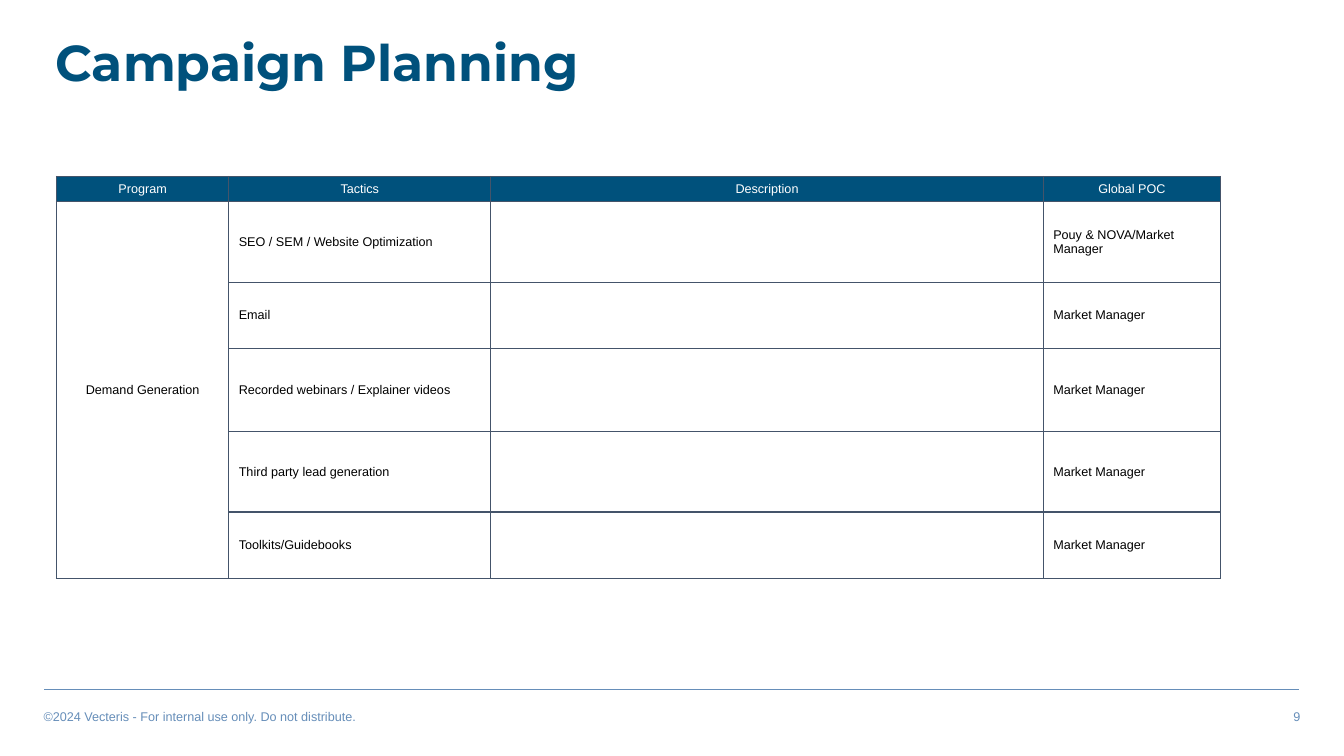
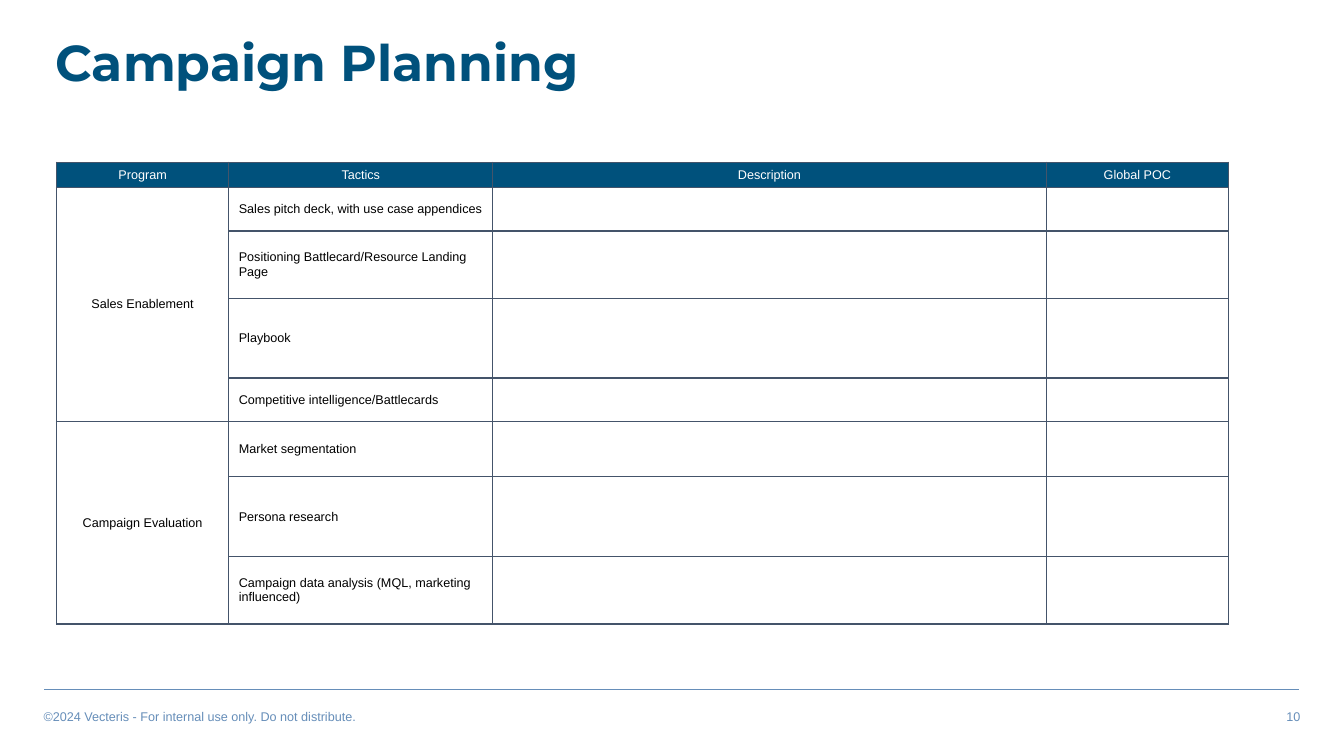
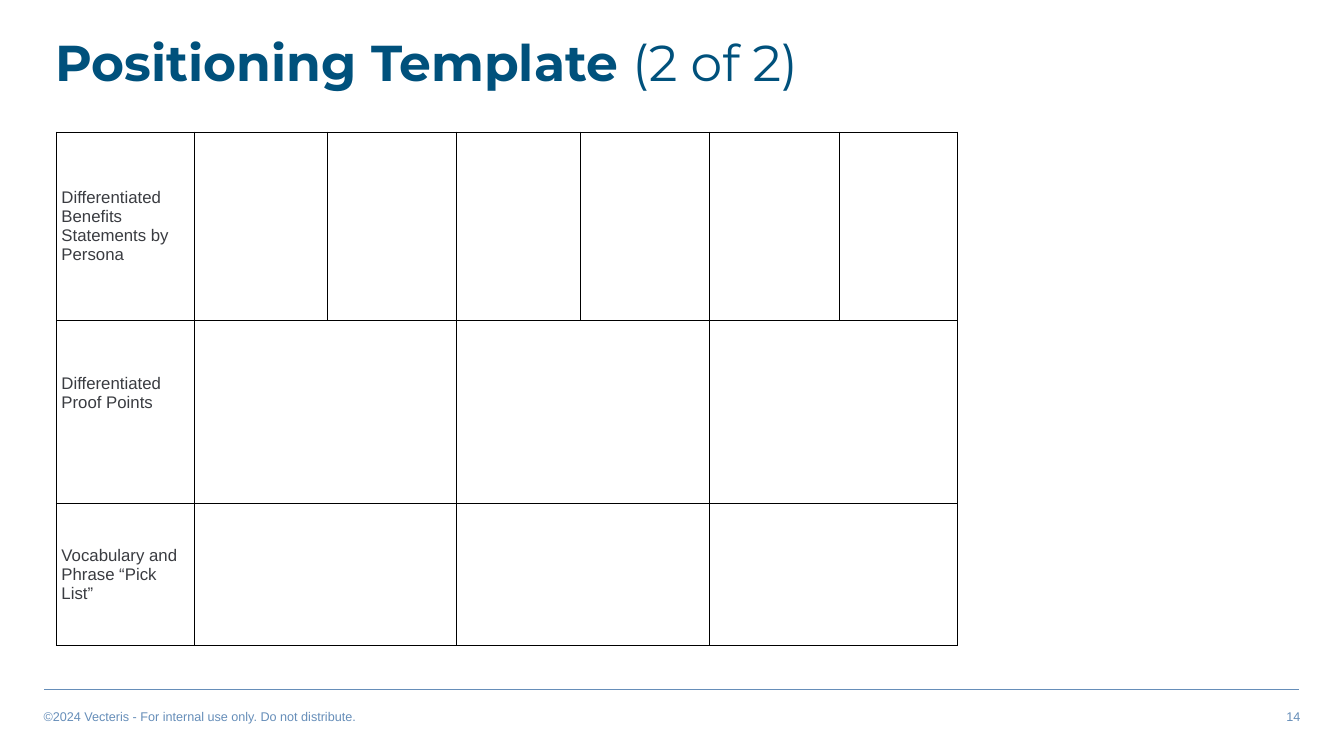
from lxml import etree
from pptx import Presentation
from pptx.dml.color import RGBColor
from pptx.enum.shapes import MSO_CONNECTOR as Connector
from pptx.enum.text import MSO_ANCHOR as Anchor, PP_ALIGN as Align
from pptx.oxml.ns import qn
from pptx.util import Pt

# Shared look
COLORS = {"navy": "00517C", "footer": "668EB9", "grid": "44546A",
          "white": "FFFFFF", "black": "000000", "label": "3A3C41"}
TITLE_FONT, BODY_FONT = "Montserrat", "Arial"
TABLE_LEFT = 40.3
FOOTER = "©2024 Vecteris - For internal use only. Do not distribute."

# Content: each program lists its tactics as (tactic, description, contact)
HEADERS = ["Program", "Tactics", "Description", "Global POC"]
CAMPAIGNS = [
    {"page": 9, "top": 126, "columns": [123.1, 187.2, 394.6, 126.7],
     "rows": [17.5, 57.6, 47.5, 59, 57.6, 47.5],
     "programs": [("Demand Generation", [
         ("SEO / SEM / Website Optimization", "", "Pouy & NOVA/Market Manager"),
         ("Email", "", "Market Manager"),
         ("Recorded webinars / Explainer videos", "", "Market Manager"),
         ("Third party lead generation", "", "Market Manager"),
         ("Toolkits/Guidebooks", "", "Market Manager")])]},
    {"page": 10, "top": 115.9, "columns": [123.1, 188.6, 395.3, 130.3],
     "rows": [17.5, 31, 48.2, 56.9, 31, 39.6, 56.9, 48.2],
     "programs": [
         ("Sales Enablement", [
             ("Sales pitch deck, with use case appendices", "", ""),
             ("Positioning Battlecard/Resource Landing Page", "", ""),
             ("Playbook", "", ""),
             ("Competitive intelligence/Battlecards", "", "")]),
         ("Campaign Evaluation", [
             ("Market segmentation", "", ""),
             ("Persona research", "", ""),
             ("Campaign data analysis (MQL, marketing influenced)", "", "")])]},
]
# Positioning rows: (label, columns per block, bottom margin)
POSITIONING = {
    "page": 14, "top": 94.3,
    "columns": [98.6, 95, 92.2, 88.6, 92.2, 92.9, 84.2],
    "rows": [134.6, 131, 101.5],
    "labels": [("Differentiated Benefits Statements by Persona", 1, 2.2),
               ("Differentiated Proof Points", 2, 29.8),
               ("Vocabulary and Phrase “Pick List”", 2, 2.2)],
}


def rgb(name):
    return RGBColor.from_string(COLORS[name])


def add_run(paragraph, text, size, color, font=BODY_FONT, bold=False):
    run = paragraph.add_run()
    run.text = text
    run.font.size, run.font.name, run.font.bold = Pt(size), font, bold
    run.font.color.rgb = rgb(color)


def add_text_box(slide, left, top, width, height):
    frame = slide.shapes.add_textbox(Pt(left), Pt(top), Pt(width), Pt(height)).text_frame
    frame.word_wrap = True
    return frame.paragraphs[0]


def add_page(deck, page, title, suffix=""):
    slide = deck.slides.add_slide(deck.slide_layouts[6])
    # Footer rule, copyright and page number
    rule = slide.shapes.add_connector(Connector.STRAIGHT, Pt(31.7), Pt(492.5), Pt(928.1), Pt(492.5))
    rule.line.color.rgb, rule.line.width = rgb("footer"), Pt(1)
    etree.SubElement(rule._element.spPr, qn("a:effectLst"))
    for left, text, align in ((24, FOOTER, Align.LEFT), (552, str(page), Align.RIGHT)):
        paragraph = add_text_box(slide, left, 502.6, 384, 18)
        paragraph.alignment = align
        add_run(paragraph, text, 9, "footer")
    # Title
    heading = add_text_box(slide, 32.4, 23.8, 731.5, 54.7)
    heading.line_spacing = 0.9
    add_run(heading, title, 36, "navy", TITLE_FONT, True)
    if suffix:
        add_run(heading, suffix, 36, "navy", TITLE_FONT)
    return slide


def add_grid(slide, plan, border, border_width):
    columns, rows = plan["columns"], plan["rows"]
    table = slide.shapes.add_table(len(rows), len(columns), Pt(TABLE_LEFT), Pt(plan["top"]),
                                   Pt(sum(columns)), Pt(sum(rows))).table
    table.first_row = table.horz_banding = False
    for column, width in zip(table.columns, columns):
        column.width = Pt(width)
    for row, height in zip(table.rows, rows):
        row.height = Pt(height)
    for cell in table.iter_cells():
        properties = cell._tc.get_or_add_tcPr()
        for side in ("lnL", "lnR", "lnT", "lnB"):
            line = etree.SubElement(properties, qn(f"a:{side}"), w=str(Pt(border_width)))
            fill = etree.SubElement(line, qn("a:solidFill"))
            etree.SubElement(fill, qn("a:srgbClr"), val=COLORS[border])
        cell.fill.background()
    return table


def write_cell(cell, text, size, color, align=Align.LEFT, anchor=Anchor.MIDDLE):
    cell.vertical_anchor = anchor
    if text:
        paragraph = cell.text_frame.paragraphs[0]
        paragraph.alignment = align
        add_run(paragraph, text, size, color)


def build_campaign(deck, plan):
    slide = add_page(deck, plan["page"], "Campaign Planning")
    table = add_grid(slide, plan, "grid", 1)
    for col, header in enumerate(HEADERS):
        cell = table.cell(0, col)
        cell.fill.solid()
        cell.fill.fore_color.rgb = rgb("navy")
        write_cell(cell, header, 9, "white", Align.CENTER, Anchor.BOTTOM)
    first = 1
    for program, tactics in plan["programs"]:
        table.cell(first, 0).merge(table.cell(first + len(tactics) - 1, 0))
        write_cell(table.cell(first, 0), program, 9, "black", Align.CENTER)
        for row, tactic in enumerate(tactics, first):
            for col, text in enumerate(tactic, 1):
                write_cell(table.cell(row, col), text, 9, "black")
        first += len(tactics)


def build_positioning(deck, plan):
    slide = add_page(deck, plan["page"], "Positioning Template ", "(2 of 2)")
    table = add_grid(slide, plan, "black", 0.75)
    for row, (label, span, bottom) in enumerate(plan["labels"]):
        cell = table.cell(row, 0)
        cell.margin_left = cell.margin_right = Pt(3.6)
        cell.margin_top, cell.margin_bottom = Pt(2.2), Pt(bottom)
        write_cell(cell, label, 12, "label")
        if span > 1:
            for col in range(1, len(plan["columns"]), span):
                table.cell(row, col).merge(table.cell(row, col + span - 1))


def main():
    deck = Presentation()
    deck.slide_width, deck.slide_height = Pt(960), Pt(540)
    for plan in CAMPAIGNS:
        build_campaign(deck, plan)
    build_positioning(deck, POSITIONING)
    deck.save("out.pptx")


if __name__ == "__main__":
    main()
